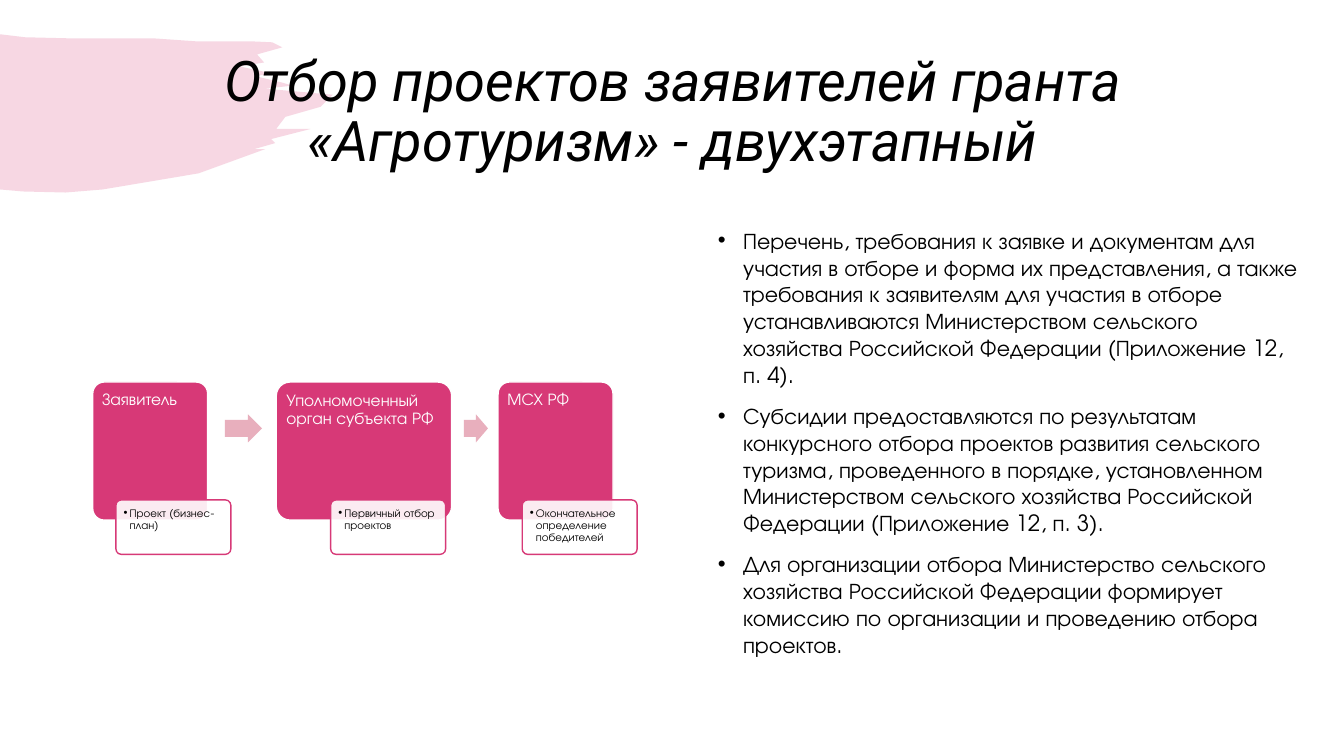
from lxml import etree
from pptx import Presentation
from pptx import util as u
from pptx.dml.color import RGBColor
from pptx.enum import shapes, text
from pptx.oxml.ns import qn

PX = 9144  # EMU in one px, 100 px to the inch
COLORS = {"pink": "D73977", "arrow": "E8AFBD", "white": "FFFFFF", "black": "000000"}
TITLE_FONT, BODY_FONT = "Roboto", "TeX Gyre Adventor"


def paint(shape, fill, line=None, opacity=100):
    shape.shadow.inherit = False
    shape.fill.solid()
    shape.fill.fore_color.rgb = RGBColor.from_string(COLORS[fill])
    if opacity < 100:
        color = shape._element.spPr.find(qn("a:solidFill"))[0]
        etree.SubElement(color, qn("a:alpha"), val=str(opacity * 1000))
    if line:
        shape.line.color.rgb = RGBColor.from_string(COLORS[line])
        shape.line.width = u.Pt(1)
    else:
        shape.line.fill.background()


def write(shape, lines, font, size, color, anchor, align, spacing, inset=None, indent=0):
    frame = shape.text_frame
    frame.text = "\n".join(lines)
    frame.word_wrap = True
    frame.auto_size = text.MSO_AUTO_SIZE.NONE
    frame.vertical_anchor = anchor
    if inset is not None:
        frame.margin_left = frame.margin_right = inset * PX
        frame.margin_top = frame.margin_bottom = inset * PX
    for para in frame.paragraphs:
        para.alignment = align
        para.line_spacing = spacing
        para.space_before = para.space_after = u.Pt(0)
        if indent:
            props = para._p.get_or_add_pPr()
            props.set("marL", str(indent * PX))
            props.set("indent", str(-indent * PX))
            etree.SubElement(props, qn("a:buFont"), typeface="Arial")
            etree.SubElement(props, qn("a:buChar"), char="•")
        for span in para.runs:
            span.font.name = font
            span.font.size = u.Pt(size)
            span.font.color.rgb = RGBColor.from_string(COLORS[color])


deck = Presentation()
deck.slide_width, deck.slide_height = 1333 * PX, 750 * PX
page = deck.slides.add_slide(deck.slide_layouts[1])
title, body = page.placeholders

# Brush stroke with a ragged right end
brush_outline = [
    (0, 34), (25, 37), (66, 38), (151, 38), (194, 41), (248, 41), (270, 42), (280, 47),
    (255, 54), (262, 62), (238, 66), (275, 74), (251, 75), (280, 82), (290, 85), (263, 88),
    (330, 94), (318, 106), (283, 116), (274, 128), (308, 128), (269, 138), (273, 142),
    (252, 148), (263, 148), (197, 172), (102, 188), (65, 191), (23, 190), (0, 188),
]
builder = page.shapes.build_freeform(*brush_outline[0], scale=PX)
builder.add_line_segments(brush_outline[1:], close=True)
brush = builder.convert_to_shape()
paint(brush, "pink", opacity=20)
page.shapes._spTree.insert(2, brush._element)  # behind the title

# Title
title.left, title.top, title.width, title.height = (n * PX for n in (92, 40, 1150, 145))
write(title, ["Отбор проектов заявителей гранта «Агротуризм» - двухэтапный"], TITLE_FONT, 40,
      "black", text.MSO_ANCHOR.MIDDLE, text.PP_ALIGN.CENTER, 0.9)
title.text_frame.paragraphs[0].runs[0].font.italic = True

# Selection stages: left, width, heading, note left, note
stages = [
    (92, 114, "Заявитель", 115, "Проект (бизнес-план)"),
    (274, 174, "Уполномоченный орган субъекта РФ", 328, "Первичный отбор проектов"),
    (494, 114, "МСХ РФ", 518, "Окончательное определение победителей"),
]
for left, width, heading, note_left, note in stages:
    stage_box = page.shapes.add_shape(shapes.MSO_SHAPE.ROUNDED_RECTANGLE,
                                      left * PX, 379 * PX, width * PX, 137 * PX)
    note_box = page.shapes.add_shape(shapes.MSO_SHAPE.ROUNDED_RECTANGLE,
                                     note_left * PX, 496 * PX, 114 * PX, 54 * PX)
    stage_box.adjustments[0] = note_box.adjustments[0] = 0.1
    paint(stage_box, "pink", "white")
    paint(note_box, "white", "pink", opacity=90)
    write(stage_box, [heading], BODY_FONT, 12, "white", text.MSO_ANCHOR.TOP,
          text.PP_ALIGN.LEFT, 0.9, inset=6)
    write(note_box, [note], BODY_FONT, 8, "black", text.MSO_ANCHOR.TOP,
          text.PP_ALIGN.LEFT, 0.9, inset=6, indent=6)

# Arrows between the stages
for left, width in ((223, 37), (460, 24)):
    arrow = page.shapes.add_shape(shapes.MSO_SHAPE.RIGHT_ARROW,
                                  left * PX, 411 * PX, width * PX, 28 * PX)
    arrow.adjustments[0] = 0.6
    paint(arrow, "arrow")

# Selection rules
rules = [
    "Перечень, требования к заявке и документам для участия в отборе и форма их представления, "
    "а также требования к заявителям для участия в отборе устанавливаются Министерством "
    "сельского хозяйства Российской Федерации (Приложение 12, п. 4).",
    "Субсидии предоставляются по результатам конкурсного отбора проектов развития сельского "
    "туризма, проведенного в порядке, установленном Министерством сельского хозяйства "
    "Российской Федерации (Приложение 12, п. 3).",
    "Для организации отбора Министерство сельского хозяйства Российской Федерации формирует "
    "комиссию по организации и проведению отбора проектов.",
]
body.left, body.top, body.width, body.height = (n * PX for n in (702, 220, 599, 455))
write(body, rules, BODY_FONT, 16, "black", text.MSO_ANCHOR.TOP, text.PP_ALIGN.LEFT, 1.0, indent=25)
for para in body.text_frame.paragraphs:
    para.space_before = u.Pt(10)

deck.save("out.pptx")
